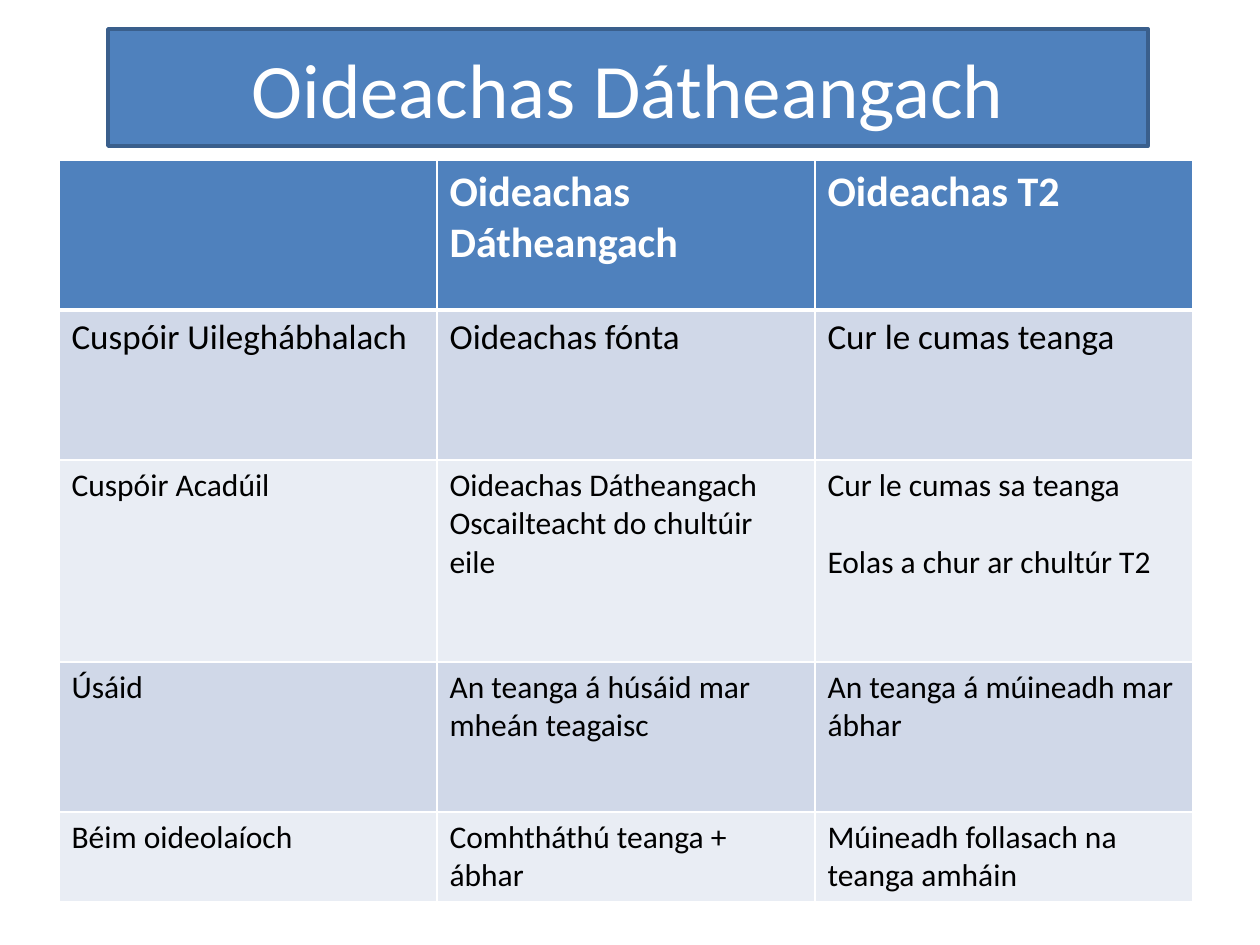
from lxml.etree import SubElement
from pptx import Presentation
from pptx.dml.color import RGBColor
from pptx.enum.shapes import MSO_SHAPE as Shape
from pptx.enum.text import MSO_ANCHOR as Anchor, PP_ALIGN as Align
from pptx.oxml.ns import qn
from pptx.util import Emu, Pt

PX_PER_INCH = 126
FONT = "Calibri"
BLUE = RGBColor(0x4F, 0x81, 0xBD)
DARK_BLUE = RGBColor(0x3A, 0x5F, 0x8C)
BANDS = [RGBColor(0xD0, 0xD8, 0xE8), RGBColor(0xE9, 0xED, 0xF4)]
WHITE = RGBColor(0xFF, 0xFF, 0xFF)
BLACK = RGBColor(0, 0, 0)

# Height in px, text size in points, paragraphs of each cell
ROWS = [
    (150, 24, [[], ["Oideachas Dátheangach"], ["Oideachas T2"]]),
    (150, 20, [["Cuspóir Uileghábhalach"], ["Oideachas fónta"],
               ["Cur le cumas teanga"]]),
    (202, 18, [["Cuspóir Acadúil"],
               ["Oideachas Dátheangach", "Oscailteacht do chultúir eile"],
               ["Cur le cumas sa teanga", "Eolas a chur ar chultúr T2"]]),
    (150, 18, [["Úsáid"], ["An teanga á húsáid mar mheán teagaisc"],
               ["An teanga á múineadh mar ábhar"]]),
    (88, 18, [["Béim oideolaíoch"], ["Comhtháthú teanga + ábhar"],
              ["Múineadh follasach na teanga amháin"]]),
]
CULTURE_GOAL = "Eolas a chur ar chultúr T2"  # stands one line apart


def px(length):
    return Emu(round(length * 914400 / PX_PER_INCH))


def add_run(paragraph, text, size, color, bold=False):
    run = paragraph.add_run()
    run.text = text
    font = run.font
    font.name, font.size, font.bold = FONT, Pt(size), bold
    font.color.rgb = color


def set_borders(cell, bottom_width, top_width):
    properties = cell._tc.get_or_add_tcPr()
    widths = {"a:lnL": 1, "a:lnR": 1, "a:lnT": top_width, "a:lnB": bottom_width}
    for tag, width in widths.items():
        line = SubElement(properties, qn(tag), w=str(Pt(width)))
        fill = SubElement(line, qn("a:solidFill"))
        SubElement(fill, qn("a:srgbClr"), val=str(WHITE))


def add_title(slide, left, top, width, height):
    banner = slide.shapes.add_shape(
        Shape.RECTANGLE, px(left), px(top), px(width), px(height))
    banner.shadow.inherit = False
    banner.fill.solid()
    banner.fill.fore_color.rgb = BLUE
    banner.line.color.rgb = DARK_BLUE
    banner.line.width = Pt(2)
    frame = banner.text_frame
    frame.word_wrap = True
    frame.vertical_anchor = Anchor.MIDDLE
    heading = frame.paragraphs[0]
    heading.alignment = Align.CENTER
    add_run(heading, "Oideachas Dátheangach", 44, WHITE)


def add_comparison(slide, left, top, width):
    height = sum(row[0] for row in ROWS)
    table = slide.shapes.add_table(
        len(ROWS), 3, px(left), px(top), px(width), px(height)).table
    for column in table.columns:
        column.width = px(width / 3)
    for r, (row_height, size, texts) in enumerate(ROWS):
        table.rows[r].height = px(row_height)
        header = r == 0
        for c, paragraphs in enumerate(texts):
            cell = table.cell(r, c)
            set_borders(cell, 3 if header else 1, 3 if r == 1 else 1)
            cell.fill.solid()
            cell.fill.fore_color.rgb = BLUE if header else BANDS[(r - 1) % 2]
            frame = cell.text_frame
            for i, text in enumerate(paragraphs):
                paragraph = frame.add_paragraph() if i else frame.paragraphs[0]
                if text == CULTURE_GOAL:
                    paragraph.space_before = Pt(22)
                add_run(paragraph, text, size, WHITE if header else BLACK, header)


def main():
    presentation = Presentation()
    presentation.slide_width, presentation.slide_height = px(1260), px(945)
    slide = presentation.slides.add_slide(presentation.slide_layouts[6])
    add_title(slide, 108, 29, 1040, 117)
    add_comparison(slide, 59, 160, 1134)
    presentation.save("out.pptx")


if __name__ == "__main__":
    main()
